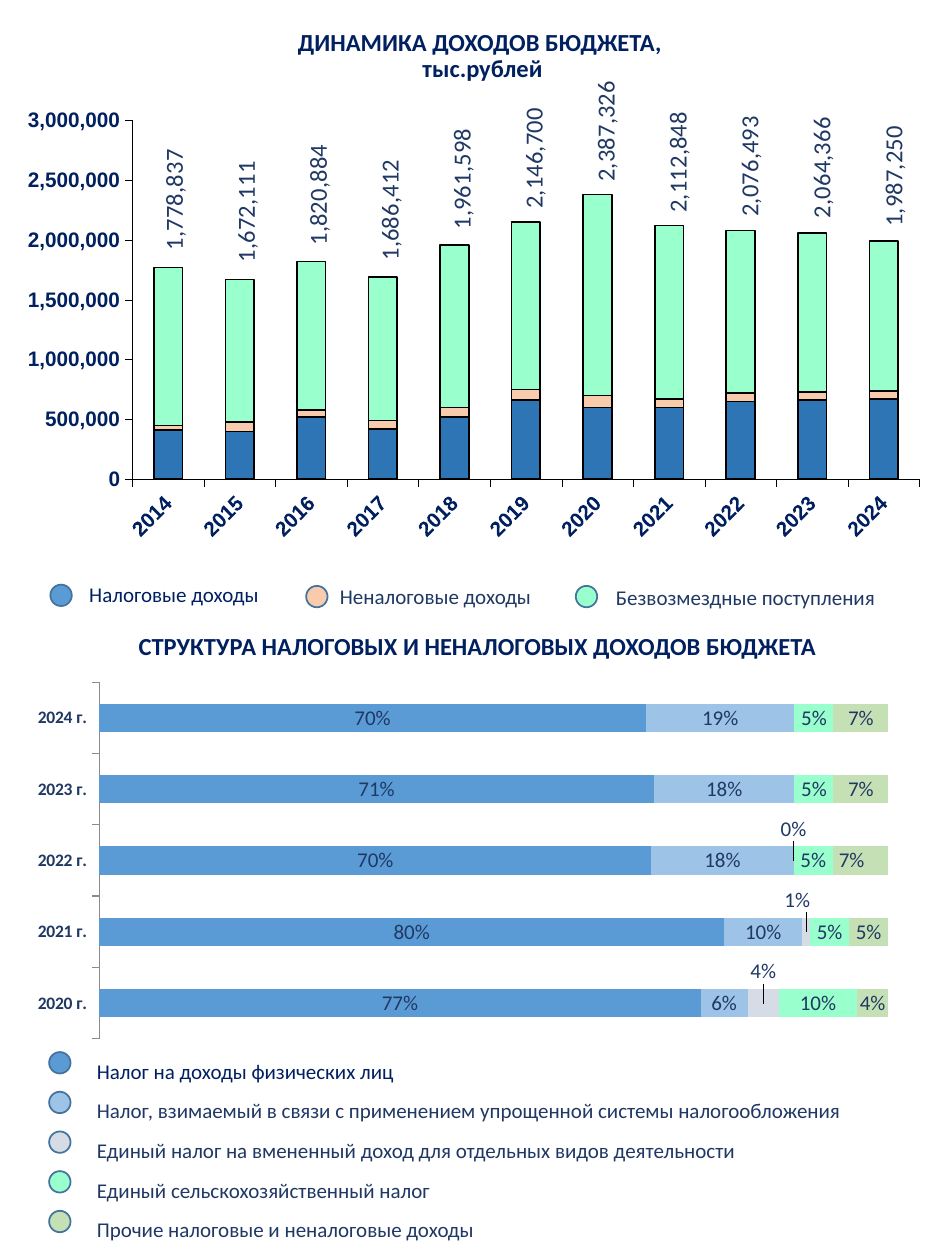
import pptx
import pptx.chart.data
import pptx.dml.color
import pptx.enum.chart
import pptx.enum.shapes
import pptx.enum.text
import pptx.oxml
import pptx.oxml.ns
import pptx.util
from pptx.util import Inches, Pt

COLORS = {
    "navy": "002060", "slate": "203864", "black": "000000", "gray": "8B8B8B",
    "outline": "43739E", "deep blue": "2E75B6", "blue": "5B9BD5",
    "light blue": "9DC3E6", "pale gray": "D6DCE5", "mint": "99FFCC",
    "green": "C5E0B4", "peach": "F8CBAD", "orange": "ED7D31",
}

TITLES = [  # left, top, lines
    (0.36, 0.17, ["ДИНАМИКА ДОХОДОВ БЮДЖЕТА, ", "тыс.рублей"]),
    (0.32, 4.86, ["СТРУКТУРА НАЛОГОВЫХ И НЕНАЛОГОВЫХ ДОХОДОВ БЮДЖЕТА"]),
]

YEARS = [str(year) for year in range(2014, 2025)]
INCOME = [  # thousands of roubles
    ("Налоговые доходы", "deep blue",
     [410, 400, 520, 420, 520, 660, 600, 600, 650, 660, 670]),
    ("Неналоговые доходы", "peach",
     [40, 80, 60, 70, 80, 90, 100, 70, 70, 70, 70]),
    ("Безвозмездные поступления", "mint",
     [1320, 1190, 1240, 1200, 1360, 1400, 1680, 1450, 1360, 1330, 1250]),
]
TOTALS = [1778837, 1672111, 1820884, 1686412, 1961598, 2146700,
          2387326, 2112848, 2076493, 2064366, 1987250]
INCOME_MAXIMUM = 3000000

STRUCTURE_YEARS = [f"{year} г." for year in range(2020, 2025)]
STRUCTURE = [
    ("Налог на доходы физических лиц", "blue", [0.77, 0.8, 0.7, 0.71, 0.7]),
    ("Налог, взимаемый в связи с применением упрощенной системы налогообложения",
     "light blue", [0.06, 0.1, 0.18, 0.18, 0.19]),
    ("Единый налог на вмененный доход для отдельных видов деятельности",
     "pale gray", [0.04, 0.01, 0, 0, 0]),
    ("Единый сельскохозяйственный налог", "mint", [0.1, 0.05, 0.05, 0.05, 0.05]),
    ("Прочие налоговые и неналоговые доходы", "green",
     [0.04, 0.05, 0.07, 0.07, 0.07]),
]
# (series, point): shift as shares of the chart, or None for no label
LABEL_SHIFTS = {
    (2, 0): (0, -0.08), (2, 1): (-0.01, -0.08), (2, 2): (0, -0.08),
    (2, 3): None, (2, 4): None, (4, 2): (-0.01, 0),
}

# marker left, marker top, text left, text top, text width, fill, text colour
INCOME_LEGEND = [
    (0.4, 4.64, 0.61, 4.57, 1.59, "blue", "navy"),
    (2.43, 4.65, 2.6, 4.58, 1.76, "peach", "slate"),
    (4.57, 4.65, 4.79, 4.59, 2.41, "mint", "slate"),
]
LEGEND_TOP, LEGEND_PITCH = 8.35, 0.315


def rgb(name):
    return pptx.dml.color.RGBColor.from_string(COLORS[name])


def style_font(font, size, color, bold=False, name="Calibri"):
    font.size, font.bold, font.name = Pt(size), bold, name
    font.color.rgb = rgb(color)


def add_text(slide, box, lines, size, color, title=False):
    frame = slide.shapes.add_textbox(*map(Inches, box)).text_frame
    frame.word_wrap = True
    paragraph = frame.paragraphs[0]
    if title:
        frame.vertical_anchor = pptx.enum.text.MSO_ANCHOR.MIDDLE
        paragraph.alignment = pptx.enum.text.PP_ALIGN.CENTER
        paragraph.line_spacing = 0.9
    for number, line in enumerate(lines):
        if number:
            paragraph.add_line_break()
        run = paragraph.add_run()
        run.text = line
        style_font(run.font, size, color, title)


def add_marker(slide, left, top, color):
    marker = slide.shapes.add_shape(
        pptx.enum.shapes.MSO_SHAPE.FLOWCHART_CONNECTOR,
        Inches(left), Inches(top), Inches(0.17), Inches(0.17))
    marker.shadow.inherit = False
    marker.fill.solid()
    marker.fill.fore_color.rgb = rgb(color)
    marker.line.color.rgb = rgb("outline")
    marker.line.width = Pt(1)


def chart_xml(text):
    return pptx.oxml.parse_xml(
        text.replace(">", f' {pptx.oxml.ns.nsdecls("c")}>', 1)
        if "/>" not in text.split(">")[0] + ">"
        else text.replace("/>", f' {pptx.oxml.ns.nsdecls("c")}/>', 1))


def layout_xml(modes, **shares):
    values = "".join(f'<c:{key} val="{value}"/>' for key, value in shares.items())
    return chart_xml(f"<c:layout><c:manualLayout>{modes}{values}"
                     "</c:manualLayout></c:layout>")


def add_chart(slide, kind, box, plot_box, categories, series, number_format):
    """Add a chart with a fixed inner plot area and no legend or gridlines."""
    data = pptx.chart.data.CategoryChartData(number_format=number_format)
    data.categories = categories
    for name, _, values in series:
        data.add_series(name, values)
    chart = slide.shapes.add_chart(kind, *map(Inches, box), data).chart
    chart.has_title = chart.has_legend = False
    style_font(chart.font, 10, "black")
    chart.value_axis.has_major_gridlines = False
    area = chart._chartSpace.chart.plotArea
    for old in area.findall(pptx.oxml.ns.qn("c:layout")):
        area.remove(old)
    modes = ('<c:layoutTarget val="inner"/><c:xMode val="edge"/>'
             '<c:yMode val="edge"/>')
    area.insert(0, layout_xml(modes, **dict(zip("xywh", plot_box))))
    chart.plots[0].vary_by_categories = False
    return chart


def fill_bars(chart, series, outlined=False):
    plot = chart.plots[0]
    plot.gap_width, plot.overlap = 150, 100
    for bars, (_, color, _) in zip(plot.series, series):
        bars.format.fill.solid()
        bars.format.fill.fore_color.rgb = rgb(color)
        if outlined:
            bars.format.line.color.rgb = rgb("black")
            bars.format.line.width = Pt(1)


def show_labels(series, size, number_format, position):
    labels = series.data_labels
    labels.show_value = True
    labels.number_format, labels.number_format_is_linked = number_format, False
    labels.position = position
    style_font(labels.font, size, "slate")
    return labels


def shift_label(series, index, shift):
    """Move one point's label, or remove it when shift is None."""
    style_font(series.points[index].data_label.font, 12, "slate")
    label = series._element.xpath(f"c:dLbls/c:dLbl[c:idx/@val='{index}']")[0]
    if shift is None:
        for child in list(label)[1:]:
            label.remove(child)
        label.append(chart_xml('<c:delete val="1"/>'))
    else:
        label.insert(1, layout_xml("", x=shift[0], y=shift[1]))


def rotate(text_properties, degrees):
    body = text_properties.find(pptx.oxml.ns.qn("a:bodyPr"))
    body.set("rot", str(degrees * 60000))
    body.set("vert", "horz")


def add_income_charts(slide):
    types = pptx.enum.chart.XL_CHART_TYPE
    series = [(name, color, [value * 1000 for value in values])
              for name, color, values in INCOME]
    columns = add_chart(slide, types.COLUMN_STACKED, (0.22, 0.8, 7.08, 3.7),
                        (0.108, 0.042, 0.892, 0.77), YEARS, series, "#,##0")
    fill_bars(columns, series, outlined=True)
    for axis in (columns.category_axis, columns.value_axis):
        style_font(axis.tick_labels.font, 12, "navy", True, "Arial")
        axis.format.line.color.rgb = rgb("black")
        axis.format.line.width = Pt(0.25)
    rotate(columns.category_axis._element.txPr, -45)
    columns.value_axis.tick_labels.number_format = "#,##0"
    columns.value_axis.tick_labels.number_format_is_linked = False
    columns.value_axis.major_unit = 500000

    totals = add_chart(slide, types.LINE, (0.81, 0.36, 6.43, 2.91),
                       (0.02, 0.046, 0.977, 0.922), YEARS,
                       [("Всего", "orange", TOTALS)], "#,##0")
    line = totals.plots[0].series[0]
    line.smooth = False
    line.format.line.fill.background()
    line.marker.style = pptx.enum.chart.XL_MARKER_STYLE.NONE
    labels = show_labels(line, 14, "#,##0",
                         pptx.enum.chart.XL_LABEL_POSITION.RIGHT)
    rotate(labels._element.find(pptx.oxml.ns.qn("c:txPr")), -90)
    totals.category_axis.visible = totals.value_axis.visible = False
    for chart in (columns, totals):
        chart.value_axis.minimum_scale = 0
        chart.value_axis.maximum_scale = INCOME_MAXIMUM


def add_structure_chart(slide):
    chart = add_chart(slide, pptx.enum.chart.XL_CHART_TYPE.BAR_STACKED_100,
                      (0.17, 5.41, 7.1, 3.14), (0.087, 0, 0.882, 0.903),
                      STRUCTURE_YEARS, STRUCTURE, "0%")
    fill_bars(chart, STRUCTURE)
    chart.value_axis.visible = False
    chart.value_axis.maximum_scale = 1
    style_font(chart.category_axis.tick_labels.font, 10, "slate", True)
    chart.category_axis.format.line.color.rgb = rgb("gray")
    all_series = list(chart.plots[0].series)
    for series in all_series:
        show_labels(series, 12, "0%", pptx.enum.chart.XL_LABEL_POSITION.CENTER)
    for (number, index), shift in LABEL_SHIFTS.items():
        shift_label(all_series[number], index, shift)


def main():
    presentation = pptx.Presentation()
    presentation.slide_width, presentation.slide_height = Inches(7.5), Inches(10)
    slide = presentation.slides.add_slide(presentation.slide_layouts[6])
    add_income_charts(slide)
    add_structure_chart(slide)
    for left, top, lines in TITLES:
        add_text(slide, (left, top, 6.94, 0.56), lines, 14, "navy", title=True)
    for (name, _, _), entry in zip(INCOME, INCOME_LEGEND):
        marker_left, marker_top, left, top, width, fill, color = entry
        add_marker(slide, marker_left, marker_top, fill)
        add_text(slide, (left, top, width, 0.3), [name], 12, color)
    for row, (name, fill, _) in enumerate(STRUCTURE):
        top = LEGEND_TOP + row * LEGEND_PITCH
        add_marker(slide, 0.39, top, fill)
        add_text(slide, (0.67, top, 6.24, 0.3), [name], 12,
                 "slate" if row else "navy")
    presentation.save("out.pptx")


if __name__ == "__main__":
    main()
